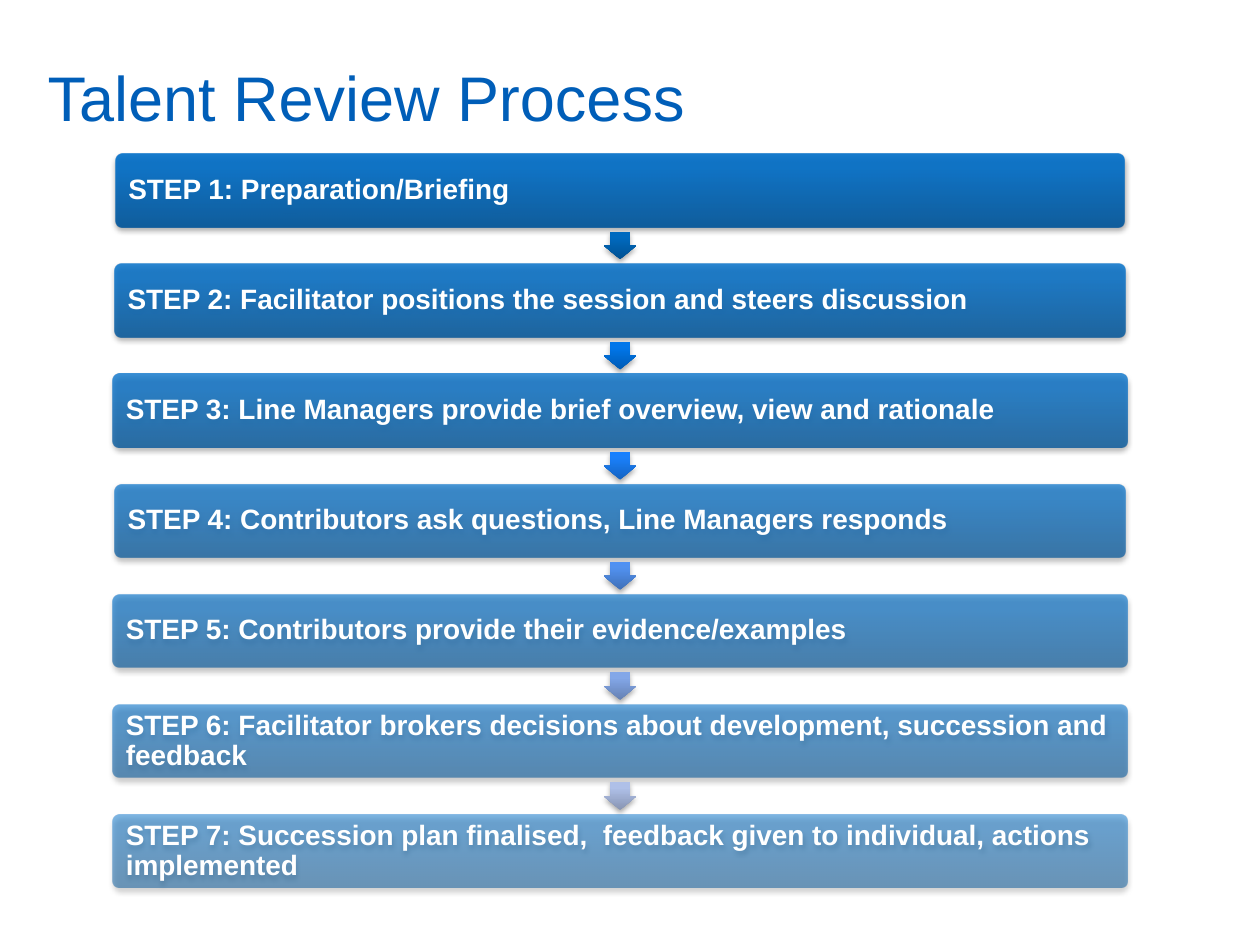
"""Build the talent review slide: seven fading steps joined by down-pointing arrows."""
from dataclasses import dataclass

import lxml.etree
import pptx
import pptx.dml.color
import pptx.enum.shapes
import pptx.enum.text
import pptx.oxml.ns
import pptx.util

Cm = pptx.util.Cm
Pt = pptx.util.Pt
SHAPES = pptx.enum.shapes.MSO_SHAPE
FONT = "Arial"
CENTRE, FIRST_TOP, PITCH = 12.5, 3.1, 2.22
BAR_HEIGHT = 1.48
ARROW_LENGTH, ARROW_BREADTH, ARROW_DROP = 0.56, 0.66, 1.85
STOPS = (0, 80, 100)
BAR_COLOURS = ("00559A", "006EC8", "006FC9")


@dataclass
class Step:
    text: str
    width: float
    opacity: int


STEPS = [
    Step("STEP 1: Preparation/Briefing", 20.35, 90),
    Step("STEP 2: Facilitator positions the session and steers discussion", 20.38, 83),
    Step("STEP 3: Line Managers provide brief overview, view and rationale", 20.45, 77),
    Step("STEP 4: Contributors ask questions, Line Managers responds", 20.38, 70),
    Step("STEP 5: Contributors provide their evidence/examples", 20.45, 63),
    Step("STEP 6: Facilitator brokers decisions about development, succession and feedback", 20.45, 57),
    Step("STEP 7: Succession plan finalised,  feedback given to individual, actions implemented", 20.45, 50),
]
ARROW_COLOURS = [
    ("005193", "006ABF", "006AC0"),
    ("005BB4", "0076EA", "0076EB"),
    ("1463C1", "1A80FB", "1780FF"),
    ("3F70B8", "5191EF", "4F91F3"),
    ("6581B3", "83A7E8", "82A7EB"),
    ("8794B2", "AFC0E8", "AFC1EA"),
]


def colour(value: str) -> pptx.dml.color.RGBColor:
    return pptx.dml.color.RGBColor.from_string(value)


def add_node(parent, tag: str, **attributes):
    node = lxml.etree.SubElement(parent, pptx.oxml.ns.qn(tag))
    for name, value in attributes.items():
        node.set(name, str(value))
    return node


def add_colour(parent, value: str, opacity: int) -> None:
    node = add_node(parent, "a:srgbClr", val=value)
    if opacity < 100:
        add_node(node, "a:alpha", val=opacity * 1000)


def style(shape, colours: tuple[str, ...], opacity: int = 100) -> None:
    shape.line.fill.background()
    shape.fill.gradient()
    shape.fill.gradient_angle = 90
    properties = shape._element.spPr
    gradient = properties.find(pptx.oxml.ns.qn("a:gradFill"))
    gradient.set("rotWithShape", "0")
    stop_list = gradient.find(pptx.oxml.ns.qn("a:gsLst"))
    for old_stop in list(stop_list):
        stop_list.remove(old_stop)
    for position, value in zip(STOPS, colours):
        add_colour(add_node(stop_list, "a:gs", pos=position * 1000), value, opacity)
    shape.shadow.inherit = False
    effects = properties.find(pptx.oxml.ns.qn("a:effectLst"))
    shadow = add_node(effects, "a:outerShdw", blurRad=int(Pt(3.1)), dist=int(Pt(1.8)),
                      dir=5400000, rotWithShape=0)
    add_colour(shadow, "000000", 35)


def write(box, text: str, size: int, value: str, bold: bool = False) -> None:
    frame = box.text_frame
    frame.word_wrap = True
    frame.vertical_anchor = pptx.enum.text.MSO_ANCHOR.MIDDLE
    para = frame.paragraphs[0]
    para.alignment = pptx.enum.text.PP_ALIGN.LEFT
    span = para.add_run()
    span.text = text
    span.font.name = FONT
    span.font.size = Pt(size)
    span.font.bold = bold
    span.font.color.rgb = colour(value)


def add_bar(page, step: Step, top: float) -> None:
    bar = page.shapes.add_shape(SHAPES.ROUNDED_RECTANGLE, Cm(CENTRE - step.width / 2), Cm(top),
                                Cm(step.width), Cm(BAR_HEIGHT))
    bar.adjustments[0] = 0.1
    style(bar, BAR_COLOURS, step.opacity)
    write(bar, step.text, 16, "FFFFFF", bold=True)
    frame = bar.text_frame
    frame.margin_left = frame.margin_right = frame.margin_top = frame.margin_bottom = Cm(0.22)
    frame.paragraphs[0].line_spacing = 0.9


def add_arrow(page, colours: tuple[str, ...], middle: float) -> None:
    arrow = page.shapes.add_shape(SHAPES.RIGHT_ARROW, Cm(CENTRE - ARROW_LENGTH / 2),
                                  Cm(middle - ARROW_BREADTH / 2),
                                  Cm(ARROW_LENGTH), Cm(ARROW_BREADTH))
    arrow.rotation = 90
    arrow.adjustments[0] = 0.6
    arrow.adjustments[1] = 0.5
    style(arrow, colours)


def main() -> None:
    deck = pptx.Presentation()
    deck.slide_width, deck.slide_height = Cm(25.4), Cm(19.05)
    page = deck.slides.add_slide(deck.slide_layouts[6])
    title = page.shapes.add_textbox(Cm(0.71), Cm(0.74), Cm(23.04), Cm(2.39))
    write(title, "Talent Review Process", 36, "005EB8")
    for index, step in enumerate(STEPS):
        top = FIRST_TOP + index * PITCH
        add_bar(page, step, top)
        if index < len(ARROW_COLOURS):
            add_arrow(page, ARROW_COLOURS[index], top + ARROW_DROP)
    deck.save("out.pptx")


if __name__ == "__main__":
    main()
